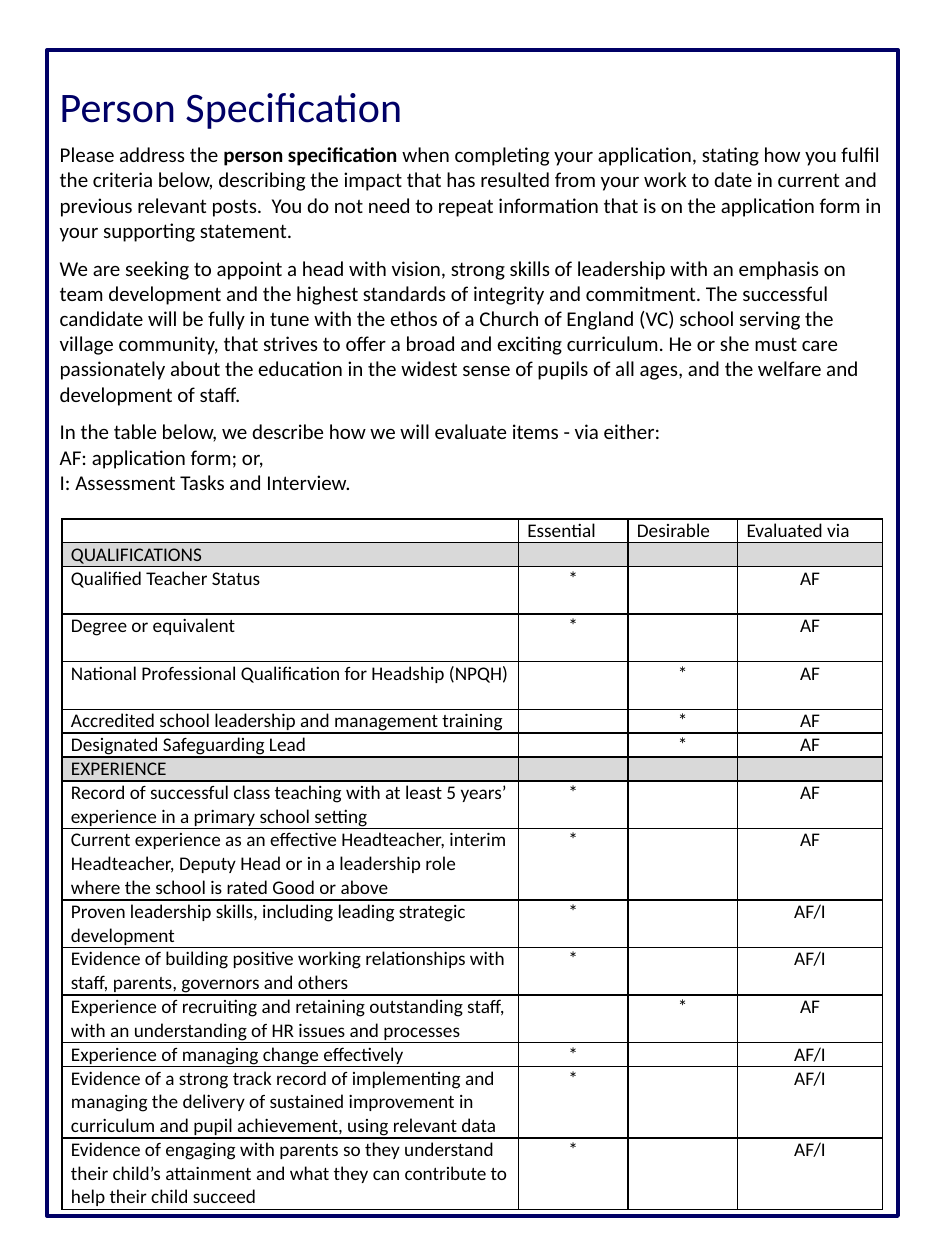
from lxml.etree import SubElement
from pptx import Presentation
from pptx.dml.color import RGBColor
from pptx.enum.text import MSO_ANCHOR, MSO_AUTO_SIZE, PP_ALIGN
from pptx.oxml.ns import qn
from pptx.util import Cm, Pt

COLORS = {"navy": "000066", "ink": "000000", "paper": "FFFFFF", "band": "D9D9D9"}
FONT = "Calibri"
LINE = 0.48  # height of one table line in cm
WIDTHS = [9.2, 2.21, 2.21, 2.92]

INTRO = [
    # runs, space before in points; every second run is bold
    (["Please address the ", "person specification ",
      "when completing your application, stating how you fulfil the criteria below, "
      "describing the impact that has resulted from your work to date in current and "
      "previous relevant posts.  You do not need to repeat information that is on the "
      "application form in your supporting statement."], 6),
    (["We are seeking to appoint a head with vision, strong skills of leadership with an "
      "emphasis on team development and the highest standards of integrity and commitment. "
      "The successful candidate will be fully in tune with the ethos of a Church of England "
      "(VC) school serving the village community, that strives to offer a broad and exciting "
      "curriculum. He or she must care passionately about the education in the widest sense "
      "of pupils of all ages, and the welfare and development of staff."], 7.2),
    (["In the table below, we describe how we will evaluate items - via either:"], 7.2),
    (["AF: application form; or,"], 0),
    (["I: Assessment Tasks and Interview."], 0),
]

HEAD = ["", "Essential", "Desirable", "Evaluated via"]
# section, then its criteria: text, essential (E) or desirable (D), evaluation, lines
GROUPS = {
    "QUALIFICATIONS": [
        ("Qualified Teacher Status", "E", "AF", 2),
        ("Degree or equivalent", "E", "AF", 2),
        ("National Professional Qualification for Headship (NPQH)", "D", "AF", 2),
        ("Accredited school leadership and management training", "D", "AF", 1),
        ("Designated Safeguarding Lead", "D", "AF", 1),
    ],
    "EXPERIENCE": [
        ("Record of successful class teaching with at least 5 years’ experience in a "
         "primary school setting", "E", "AF", 2),
        ("Current experience as an effective Headteacher, interim Headteacher, Deputy Head "
         "or in a leadership role where the school is rated Good or above", "E", "AF", 3),
        ("Proven leadership skills, including leading strategic development",
         "E", "AF/I", 2),
        ("Evidence of building positive working relationships with staff, parents, "
         "governors and others", "E", "AF/I", 2),
        ("Experience of recruiting and retaining outstanding staff, with an understanding "
         "of HR issues and processes", "D", "AF", 2),
        ("Experience of managing change effectively", "E", "AF/I", 1),
        ("Evidence of a strong track record of implementing and managing the delivery of "
         "sustained improvement in curriculum and pupil achievement, using relevant data",
         "E", "AF/I", 3),
        ("Evidence of engaging with parents so they understand their child’s attainment and "
         "what they can contribute to help their child succeed", "E", "AF/I", 3),
    ],
}


def color(name):
    return RGBColor.from_string(COLORS[name])


def style(para, size, ink="ink", align=PP_ALIGN.LEFT):
    para.alignment = align
    font = para.font
    font.name, font.size = FONT, Pt(size)
    font.color.rgb = color(ink)


def add_intro(slide):
    """Fill the framed title placeholder with the heading and its text."""
    box = slide.shapes.title
    box.left, box.top, box.width, box.height = Cm(0.95), Cm(1.01), Cm(17.15), Cm(23.5)
    box.line.color.rgb = color("navy")
    box.line.width = Pt(2.5)
    frame = box.text_frame
    frame.auto_size = MSO_AUTO_SIZE.NONE
    frame.word_wrap = True
    frame.vertical_anchor = MSO_ANCHOR.TOP
    frame.margin_top = Cm(0.62)
    head = frame.paragraphs[0]
    head.text = "Person Specification"
    style(head, 24, "navy")
    for runs, gap in INTRO:
        para = frame.add_paragraph()
        style(para, 12)
        para.space_before = Pt(gap)
        para.line_spacing = Pt(14.4)
        for i, text in enumerate(runs):
            run = para.add_run()
            run.text = text
            if i % 2:
                run.font.bold = True


def add_border(cell):
    props = cell._tc.get_or_add_tcPr()
    for side in ("lnL", "lnR", "lnT", "lnB"):
        line = SubElement(props, qn(f"a:{side}"), w=str(Pt(1)))
        fill = SubElement(line, qn("a:solidFill"))
        SubElement(fill, qn("a:srgbClr"), val=COLORS["ink"])


def fill_cell(cell, text, back, align):
    add_border(cell)
    cell.fill.solid()
    cell.fill.fore_color.rgb = color(back)
    cell.margin_left = cell.margin_right = Cm(0.18)
    cell.margin_top = cell.margin_bottom = 0
    para = cell.text_frame.paragraphs[0]
    para.text = text
    style(para, 11, align=align)


def list_rows():
    """Give texts, background, mark alignment and line count of each row."""
    rows = [(HEAD, "paper", PP_ALIGN.LEFT, 1)]
    for name, items in GROUPS.items():
        rows.append(([name, "", "", ""], "band", PP_ALIGN.LEFT, 1))
        for text, need, via, lines in items:
            marks = ["*" if need == kind else "" for kind in "ED"]
            rows.append(([text, *marks, via], "paper", PP_ALIGN.CENTER, lines))
    return rows


def add_grid(slide):
    rows = list_rows()
    high = LINE * sum(row[3] for row in rows)
    table = slide.shapes.add_table(len(rows), len(WIDTHS), Cm(1.25), Cm(10.46),
                                   Cm(sum(WIDTHS)), Cm(high)).table
    table.first_row = table.horz_banding = False
    for col, width in zip(table.columns, WIDTHS):
        col.width = Cm(width)
    for r, (texts, back, align, lines) in enumerate(rows):
        table.rows[r].height = Cm(LINE * lines)
        for c, text in enumerate(texts):
            fill_cell(table.cell(r, c), text, back, align if c else PP_ALIGN.LEFT)


def main():
    deck = Presentation()
    deck.slide_width, deck.slide_height = Cm(19.05), Cm(25.4)
    slide = deck.slides.add_slide(deck.slide_layouts[5])
    add_intro(slide)
    add_grid(slide)
    deck.save("out.pptx")


if __name__ == "__main__":
    main()
